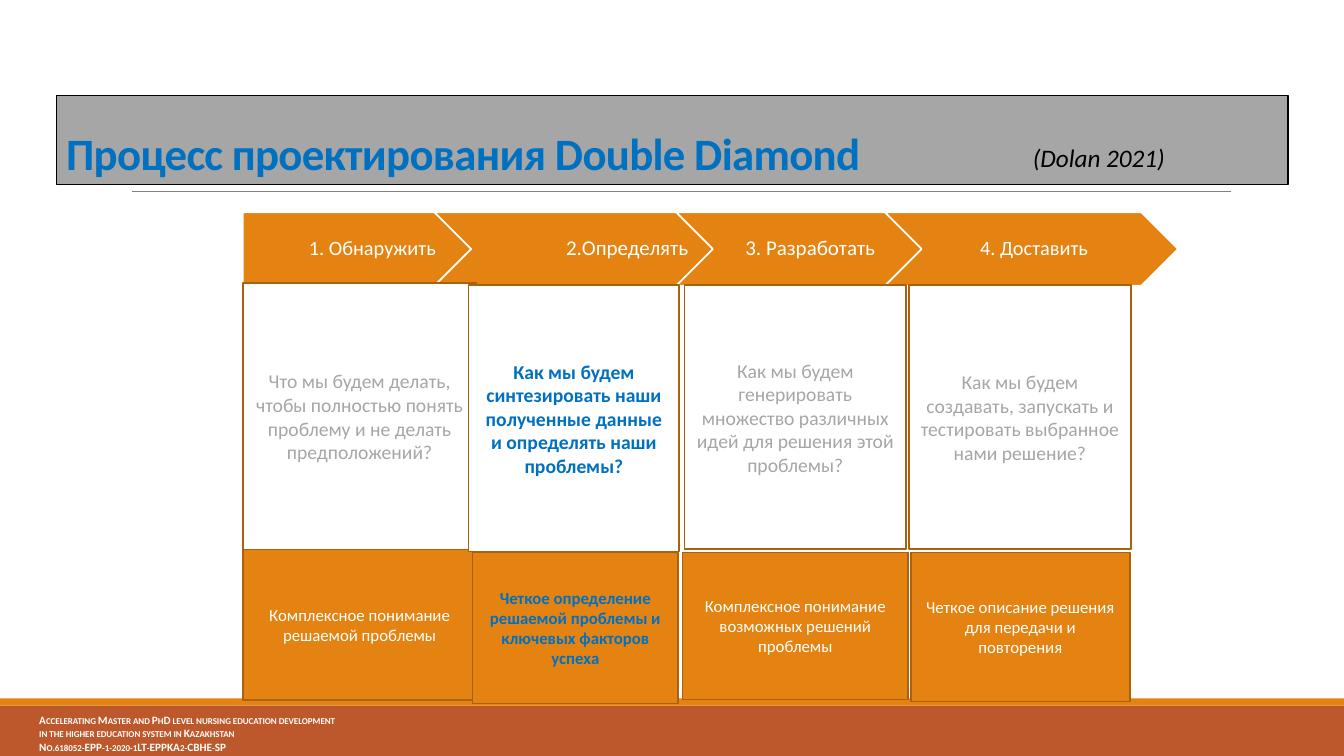
from pptx import Presentation
from pptx import util as u
from pptx.dml.color import RGBColor
from pptx.enum import shapes, text
from pptx.oxml.ns import qn
from lxml import etree

ORANGE = RGBColor(0xE4, 0x83, 0x12)
RUST = RGBColor(0xBD, 0x58, 0x2C)
BROWN = RGBColor(0xA9, 0x61, 0x0D)
BLUE = RGBColor(0x00, 0x70, 0xC0)
GREY = RGBColor(0xA6, 0xA6, 0xA6)
RULE = RGBColor(0x80, 0x80, 0x80)
WHITE = RGBColor(0xFF, 0xFF, 0xFF)
BLACK = RGBColor(0, 0, 0)

FORM = shapes.MSO_SHAPE
ANCHOR = text.MSO_ANCHOR
ALIGN = text.PP_ALIGN

# Per step: left and width of arrow, label, label size
STEPS = [
    (6.12, 6.81, "1. Обнаружить", 14.5),
    (10.95, 9.58, "2.Определять", 15),
    (17.04, 6.63, "3. Разработать", 15),
    (22.3, 7.39, "4. Доставить", 14.5),
]
# Per card: left, top, width, height, wording
RESULTS = [
    (6.12, 13.84, 5.89, 3.81, "Комплексное понимание решаемой проблемы"),
    (11.91, 13.92, 5.18, 3.81,
     "Четкое определение решаемой проблемы и ключевых факторов успеха"),
    (17.2, 13.92, 5.69, 3.71, "Комплексное понимание возможных решений проблемы"),
    (22.96, 13.92, 5.51, 3.76, "Четкое описание решения для передачи и повторения"),
]
ASKS = [
    (6.12, 7.14, 5.89, 6.71,
     "Что мы будем делать, чтобы полностью понять проблему и не делать предположений?"),
    (11.81, 7.19, 5.31, 6.71,
     "Как мы будем синтезировать наши полученные данные и определять наши проблемы?"),
    (17.25, 7.19, 5.59, 6.65,
     "Как мы будем генерировать множество различных идей для решения этой проблемы?"),
    (22.91, 7.19, 5.59, 6.65,
     "Как мы будем создавать, запускать и тестировать выбранное нами решение?"),
]
ACTIVE = 1  # the step the slide stresses
FOOTER = [
    "Accelerating Master and PhD level nursing education development",
    "in the higher education system in Kazakhstan",
    "No.618052-EPP-1-2020-1LT-EPPKA2-CBHE-SP",
]


def apply(item, form):
    for name, value in form.items():
        setattr(item, name, value)


def draw(tree, kind, box, fill, edge=None, width=1.25):
    shape = tree.add_shape(kind, *map(u.Cm, box))
    shape.shadow.inherit = False
    shape.fill.solid()
    shape.fill.fore_color.rgb = fill
    if edge is None:
        shape.line.fill.background()
    else:
        shape.line.color.rgb = edge
        shape.line.width = u.Pt(width)
    return shape


def write(shape, lines, size, color, frame=None, para=None, font=None, extra=None):
    body = shape.text_frame
    apply(body, {"word_wrap": True, **(frame or {})})
    for i, line in enumerate(lines):
        p = body.paragraphs[0] if i == 0 else body.add_paragraph()
        apply(p, {"alignment": ALIGN.LEFT, **(para or {})})
        run = p.add_run()
        run.text = line
        apply(run.font, {"name": "Calibri", "size": u.Pt(size), **(font or {})})
        run.font.color.rgb = color
        for key, value in (extra or {}).items():
            run.font._element.set(key, value)


def footer(tree, box):
    left, top, width, height = box
    draw(tree, FORM.RECTANGLE, box, RUST)
    draw(tree, FORM.RECTANGLE, (left, top - 0.18, width, 0.18), ORANGE)
    note = tree.add_textbox(*map(u.Cm, (left + 0.74, top + 0.07, 11.66, 1.2)))
    write(note, FOOTER, 8, WHITE, font={"bold": True}, extra={"cap": "small"})


def header(tree, box):
    left, top, width, height = box
    # Rule under the band
    y = u.Cm(top + height + 0.18)
    rule = tree.add_connector(shapes.MSO_CONNECTOR.STRAIGHT,
                              u.Cm(left + 1.91), y, u.Cm(left + 29.59), y)
    rule.line.color.rgb = RULE
    rule.line.width = u.Pt(0.5)
    etree.SubElement(rule._element.spPr, qn("a:effectLst"))
    # Title band and source
    band = draw(tree, FORM.RECTANGLE, box, GREY, BLACK, 1)
    write(band, ["Процесс проектирования Double Diamond"], 32, BLUE,
          {"vertical_anchor": ANCHOR.BOTTOM}, {"line_spacing": 0.85},
          {"bold": True}, {"spc": "-50"})
    cite = tree.add_textbox(*map(u.Cm, (left + 24.36, top + 1.04, 6.5, 1.02)))
    write(cite, ["(Dolan 2021)"], 18, BLACK, font={"italic": True})


def arrows(tree, top, height):
    group = tree.add_group_shape().shapes
    tip = height / 2
    for i, (left, width, label, size) in enumerate(STEPS):
        kind = FORM.CHEVRON if i else FORM.PENTAGON
        draw(group, kind, (left, top, width, height), ORANGE, WHITE)
        if i:
            area = (left + tip, top, width - height, height)
        else:
            area = (left, top, width - tip / 2, height)
        tag = group.add_textbox(*map(u.Cm, area))
        frame = {"vertical_anchor": ANCHOR.MIDDLE,
                 "margin_left": u.Cm(0.18 if i else 0.23), "margin_right": u.Cm(0.05),
                 "margin_top": u.Cm(0.1), "margin_bottom": u.Cm(0.1)}
        write(tag, [label], size, WHITE, frame,
              {"alignment": ALIGN.CENTER, "line_spacing": 0.9})


def cards(tree, items, fill, size, color):
    for i, (*box, words) in enumerate(items):
        card = draw(tree, FORM.RECTANGLE, box, fill, BROWN)
        write(card, [words], size, BLUE if i == ACTIVE else color,
              {"vertical_anchor": ANCHOR.MIDDLE}, {"alignment": ALIGN.CENTER},
              {"bold": i == ACTIVE})


def main():
    deck = Presentation()
    apply(deck, {"slide_width": u.Cm(33.87), "slide_height": u.Cm(19.05)})
    tree = deck.slides.add_slide(deck.slide_layouts[6]).shapes
    footer(tree, (0, 17.78, 33.87, 1.27))
    header(tree, (1.42, 2.41, 31.04, 2.24))
    arrows(tree, 5.35, 1.85)
    cards(tree, RESULTS, ORANGE, 12, WHITE)
    cards(tree, ASKS, WHITE, 14, GREY)
    deck.save("out.pptx")


if __name__ == "__main__":
    main()
